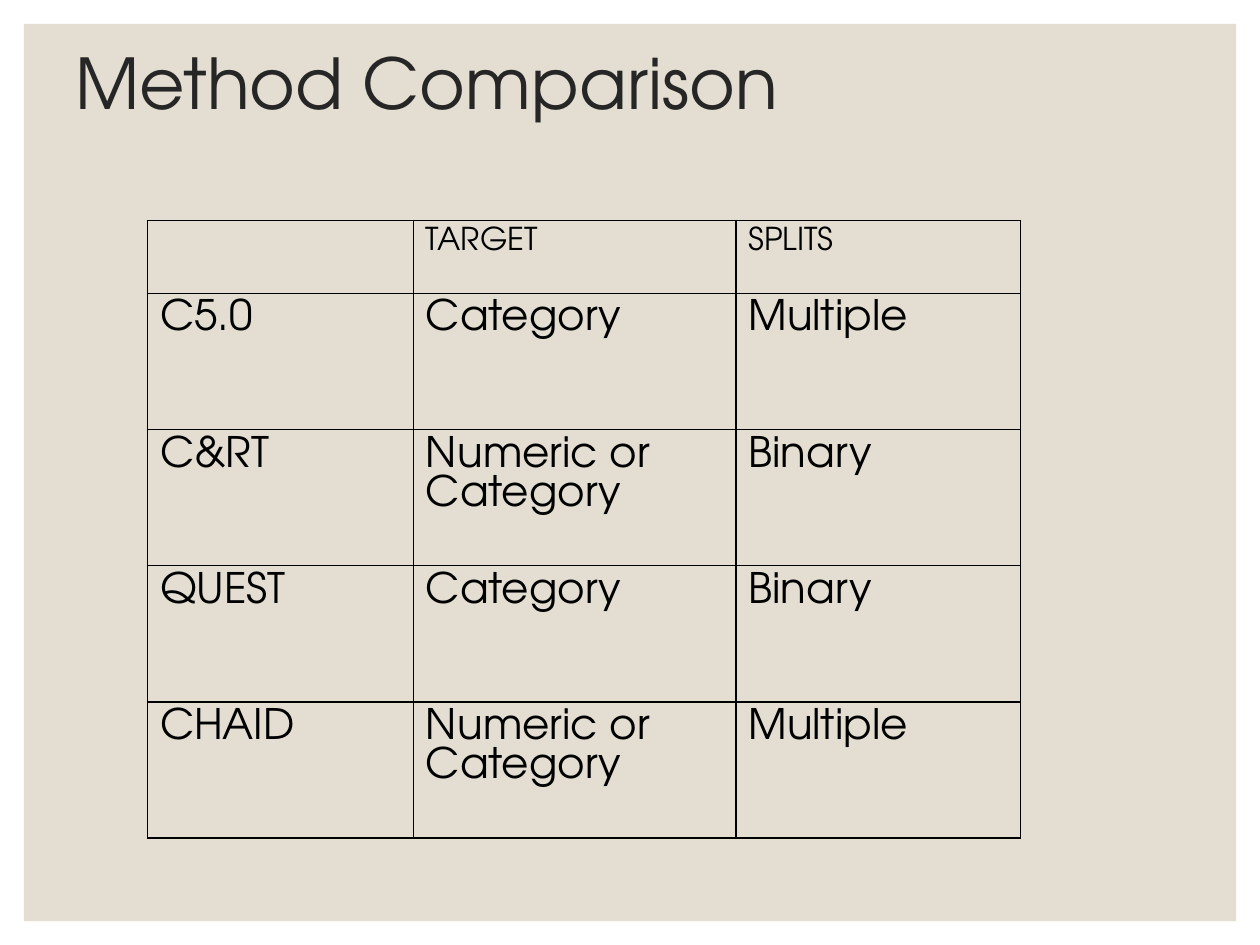
from dataclasses import dataclass

from lxml.etree import SubElement
from pptx import Presentation
from pptx.dml.color import RGBColor
from pptx.enum.shapes import MSO_SHAPE as Shape
from pptx.enum.text import MSO_ANCHOR as Anchor
from pptx.oxml.ns import qn
from pptx.slide import Slide
from pptx.util import Inches, Pt


def color(value):
    return RGBColor.from_string(value)


@dataclass
class SlideBuilder:
    """Hold the slide style and draw each kind of element."""

    slide: Slide
    font: str = "TeX Gyre Adventor"
    ink: str = "000000"
    title_ink: str = "262626"
    panel_fill: str = "E3DED1"
    border_width: float = 1

    def panel(self, left, top, width, height):
        shape = self.slide.shapes.add_shape(
            Shape.RECTANGLE, Inches(left), Inches(top), Inches(width), Inches(height)
        )
        shape.shadow.inherit = False
        shape.fill.solid()
        shape.fill.fore_color.rgb = color(self.panel_fill)
        shape.line.fill.background()

    def text_run(self, paragraph, text, size, ink):
        run = paragraph.add_run()
        run.text = text
        run.font.name = self.font
        run.font.size = Pt(size)
        run.font.color.rgb = color(ink)

    def title(self, text, left, top, width, height, size=40):
        box = self.slide.shapes.add_textbox(
            Inches(left), Inches(top), Inches(width), Inches(height)
        )
        frame = box.text_frame
        frame.word_wrap = True
        frame.vertical_anchor = Anchor.MIDDLE
        paragraph = frame.paragraphs[0]
        paragraph.line_spacing = 0.9
        self.text_run(paragraph, text, size, self.title_ink)

    def border(self, cell):
        properties = cell._tc.get_or_add_tcPr()
        for side in ("a:lnL", "a:lnR", "a:lnT", "a:lnB"):
            line = SubElement(properties, qn(side), w=str(Pt(self.border_width)))
            fill = SubElement(line, qn("a:solidFill"))
            SubElement(fill, qn("a:srgbClr"), val=self.ink)

    def cell(self, cell, lines, size):
        self.border(cell)
        cell.fill.background()
        frame = cell.text_frame
        for index, text in enumerate(lines):
            paragraph = frame.add_paragraph() if index else frame.paragraphs[0]
            self.text_run(paragraph, text, size, self.ink)

    def table(self, rows, left, top, widths, heights, header_size=18, body_size=24):
        frame = self.slide.shapes.add_table(
            len(rows), len(widths), Inches(left), Inches(top),
            Inches(sum(widths)), Inches(sum(heights)),
        )
        table = frame.table
        table.first_row = table.horz_banding = False
        for column, width in zip(table.columns, widths):
            column.width = Inches(width)
        for row_index, (row, height) in enumerate(zip(rows, heights)):
            table.rows[row_index].height = Inches(height)
            size = body_size if row_index else header_size
            for column_index, lines in enumerate(row):
                self.cell(table.cell(row_index, column_index), lines, size)


def main():
    presentation = Presentation()
    presentation.slide_width = Inches(10)
    presentation.slide_height = Inches(7.5)
    builder = SlideBuilder(presentation.slides.add_slide(presentation.slide_layouts[6]))

    category = ["Category"]
    numeric_or_category = ["Numeric or", "Category"]
    methods = [
        [[], ["TARGET"], ["SPLITS"]],
        [["C5.0"], category, ["Multiple"]],
        [["C&RT"], numeric_or_category, ["Binary"]],
        [["QUEST"], category, ["Binary"]],
        [["CHAID"], numeric_or_category, ["Multiple"]],
    ]

    builder.panel(0.19, 0.19, 9.62, 7.12)
    builder.title("Method Comparison", 0.5, 0.3, 8.17, 0.78)
    builder.table(methods, 1.17, 1.75, [2.11, 2.56, 2.26], [0.58] + [1.08] * 4)
    presentation.save("out.pptx")


if __name__ == "__main__":
    main()
